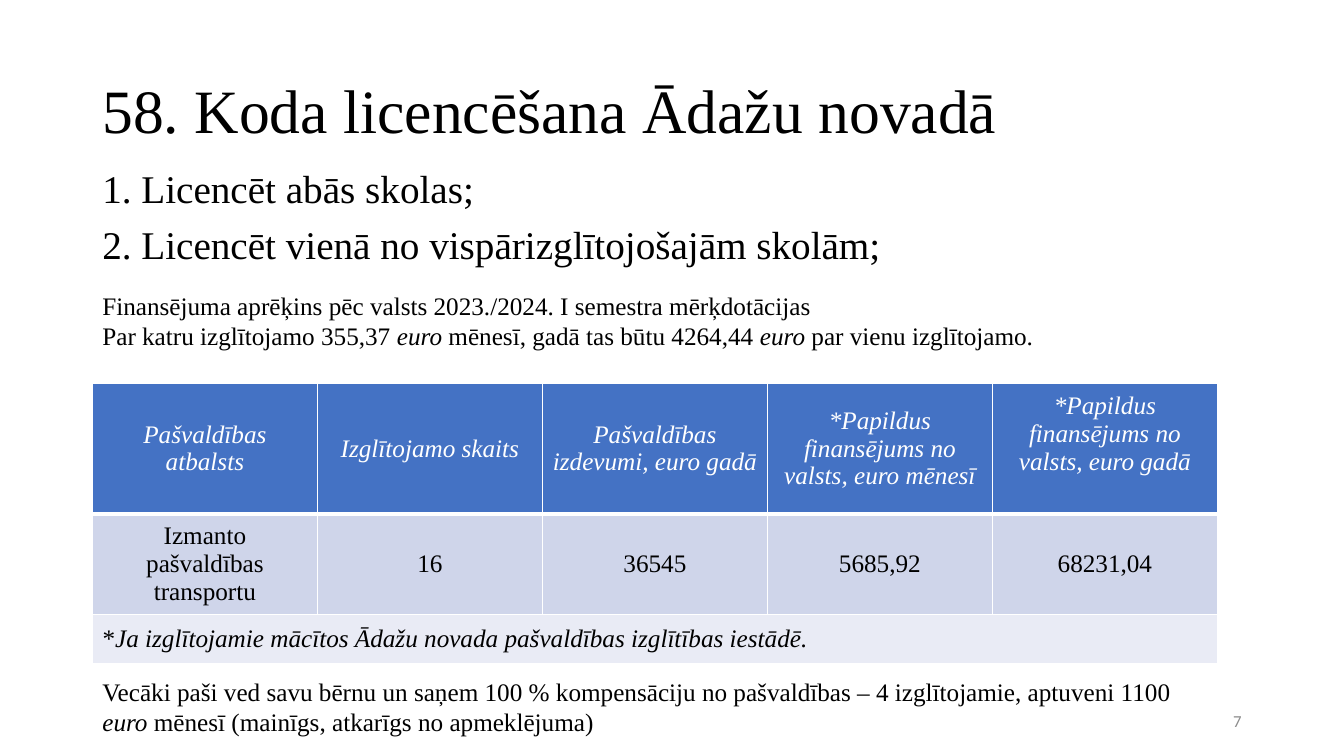
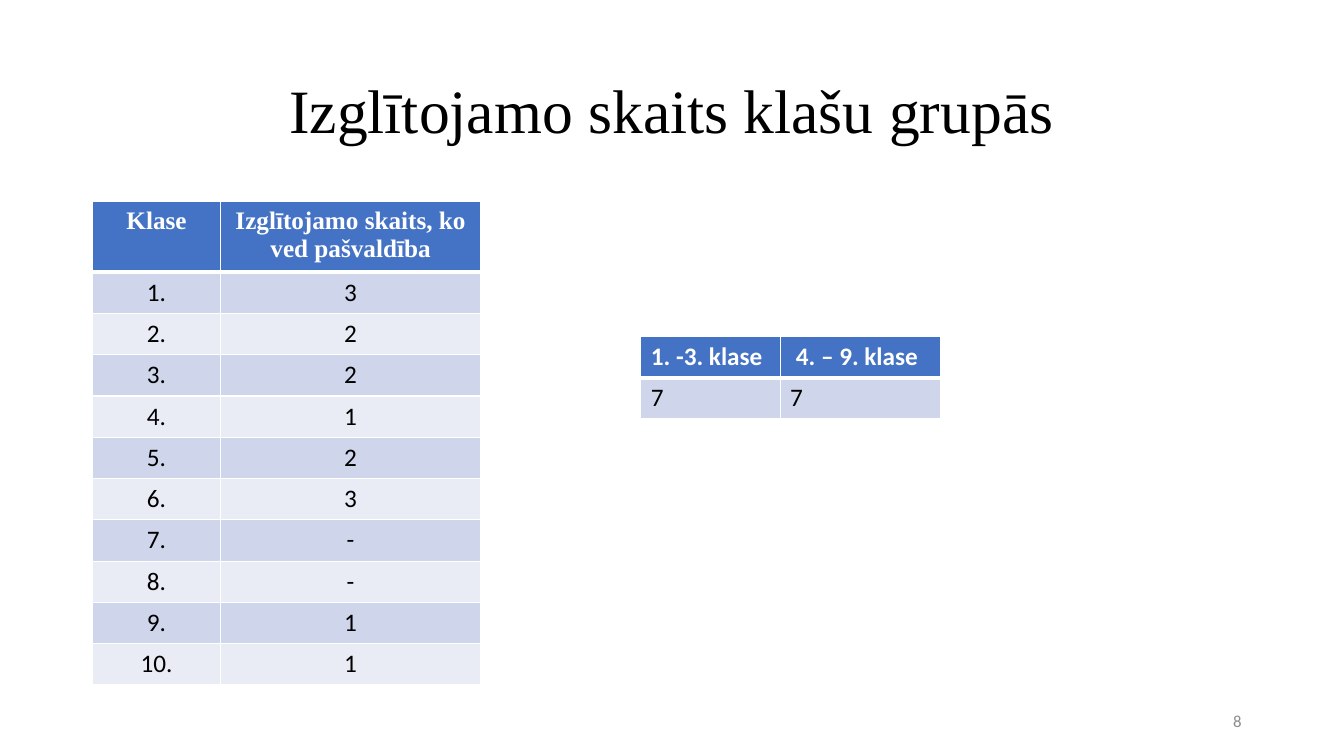
from lxml import etree
from pptx import Presentation
from pptx import util as u
from pptx.dml.color import RGBColor
from pptx.enum import text
from pptx.oxml import ns

SERIF = "Times New Roman"
SANS = "Calibri"
BLACK = "000000"
WHITE = "FFFFFF"
GREY = "8C8C8C"
HEADER_FILL = "4472C4"
BAND_FILLS = ["CFD5EA", "E9EBF5"]
LEFT, CENTER, RIGHT = text.PP_ALIGN.LEFT, text.PP_ALIGN.CENTER, text.PP_ALIGN.RIGHT
TOP, MIDDLE = text.MSO_ANCHOR.TOP, text.MSO_ANCHOR.MIDDLE
MARGIN = 2.33


def write(frame, paragraphs, size, font, color, align=LEFT, bold=False, spacing=None, before=0):
    """Each paragraph is a list of strings that alternate between upright and italic."""
    for number, pieces in enumerate(paragraphs):
        paragraph = frame.add_paragraph() if number else frame.paragraphs[0]
        paragraph.alignment = align
        paragraph.space_before = u.Pt(before)
        if spacing:
            paragraph.line_spacing = spacing
        for position, piece in enumerate(pieces):
            if piece:
                run = paragraph.add_run()
                run.text = piece
                run.font.size = u.Pt(size)
                run.font.name = font
                run.font.bold = bold
                run.font.italic = position % 2 == 1
                run.font.color.rgb = RGBColor.from_string(color)


def add_grid(slide, left, top, widths, heights, rows, header_font, body_font, align, anchor, header_bold):
    shape = slide.shapes.add_table(len(heights), len(widths), u.Cm(left), u.Cm(top),
                                   u.Cm(sum(widths)), u.Cm(sum(heights)))
    table = shape.table
    for column, width in zip(table.columns, widths):
        column.width = u.Cm(width)
    for row, height in zip(table.rows, heights):
        row.height = u.Cm(height)
    for r, row in enumerate(rows):
        for c in range(len(widths)):
            cell = table.cell(r, c)
            cell.vertical_anchor = anchor
            cell.fill.solid()
            cell.fill.fore_color.rgb = RGBColor.from_string(BAND_FILLS[(r - 1) % 2] if r else HEADER_FILL)
            thickness = {"lnL": 1, "lnR": 1, "lnT": 3 if r == 1 else 1, "lnB": 1 if r else 3}
            properties = cell._tc.get_or_add_tcPr()
            for index, (side, points) in enumerate(thickness.items()):
                line = etree.Element(ns.qn("a:" + side), w=str(u.Pt(points)))
                fill = etree.SubElement(line, ns.qn("a:solidFill"))
                etree.SubElement(fill, ns.qn("a:srgbClr"), val=WHITE)
                properties.insert(index, line)
            if c < len(row):
                write(cell.text_frame, [row[c]], 18, body_font if r else header_font,
                      BLACK if r else WHITE, align if len(row) > 1 else LEFT, header_bold and r == 0)
    return table


presentation = Presentation()
presentation.slide_width = u.Cm(33.87)
presentation.slide_height = u.Cm(19.05)

titles = [("58. Koda licencēšana Ādažu novadā", LEFT), ("Izglītojamo skaits klašu grupās", CENTER)]
slides = []
for number, (title, align) in enumerate(titles, start=7):
    slide = presentation.slides.add_slide(presentation.slide_layouts[6])
    slides.append(slide)
    title_box = slide.shapes.add_textbox(u.Cm(MARGIN), u.Cm(1.01), u.Cm(29.21), u.Cm(3.68))
    number_box = slide.shapes.add_textbox(u.Cm(23.92), u.Cm(17.66), u.Cm(7.62), u.Cm(1.01))
    for box in (title_box, number_box):
        box.text_frame.word_wrap = True
        box.text_frame.vertical_anchor = MIDDLE
    write(title_box.text_frame, [[title]], 44, SERIF, BLACK, align, spacing=0.9)
    write(number_box.text_frame, [[str(number)]], 12, SANS, GREY, RIGHT)

licensing, groups = slides

options = [["1. Licencēt abās skolas;"], ["2. Licencēt vienā no vispārizglītojošajām skolām;"]]
funding = [
    ["Finansējuma aprēķins pēc valsts 2023./2024. I semestra mērķdotācijas"],
    ["Par katru izglītojamo 355,37 ", "euro", " mēnesī, gadā tas būtu 4264,44 ", "euro ",
     "par vienu izglītojamo."],
]
compensation = [
    ["Vecāki paši ved savu bērnu un saņem 100 % kompensāciju no pašvaldības – 4 izglītojamie, aptuveni 1100 ",
     "euro", " mēnesī (mainīgs, atkarīgs no apmeklējuma)"],
]
for top, width, height, paragraphs, size, spacing, before in [
    (4.14, 29.21, 3, options, 28, 0.9, 10),
    (7.19, 26.87, 2.57, funding, 18, None, 0),
    (16.92, 28.14, 1.8, compensation, 18, None, 0),
]:
    box = licensing.shapes.add_textbox(u.Cm(MARGIN), u.Cm(top), u.Cm(width), u.Cm(height))
    box.text_frame.word_wrap = True
    write(box.text_frame, paragraphs, size, SERIF, BLACK, spacing=spacing, before=before)

support_headers = [
    "Pašvaldības atbalsts", "Izglītojamo skaits", "Pašvaldības izdevumi, euro gadā",
    "*Papildus finansējums no valsts, euro mēnesī", "*Papildus finansējums no valsts, euro gadā",
]
support_values = ["Izmanto pašvaldības transportu", "16", "36545", "5685,92", "68231,04"]
support_rows = [
    [["", header] for header in support_headers],
    [[value] for value in support_values],
    [["*", "Ja izglītojamie mācītos Ādažu novada pašvaldības izglītības iestādē."]],
]
support = add_grid(licensing, MARGIN, 9.65, [5.67] * 5, [3.3, 2.54, 1.24], support_rows,
                   SERIF, SERIF, CENTER, MIDDLE, False)
support.cell(2, 0).merge(support.cell(2, 4))
support.cell(0, 4).margin_bottom = u.Cm(0.84)

counts = ["3", "2", "2", "1", "2", "3", "-", "-", "1", "1"]
class_rows = [[["Klase"], ["Izglītojamo skaits, ko ved pašvaldība"]]]
class_rows += [[[f"{grade}."], [count]] for grade, count in enumerate(counts, start=1)]
add_grid(groups, MARGIN, 5.08, [3.23, 6.55], [1.65] + [1.04] * len(counts), class_rows,
         SERIF, SANS, CENTER, TOP, True)

group_rows = [[["1. -3. klase"], [" 4. – 9. klase"]], [["7"], ["7"]]]
add_grid(groups, 16.15, 8.48, [3.51, 4.04], [1.04] * 2, group_rows, SANS, SANS, LEFT, TOP, True)

presentation.save("out.pptx")
